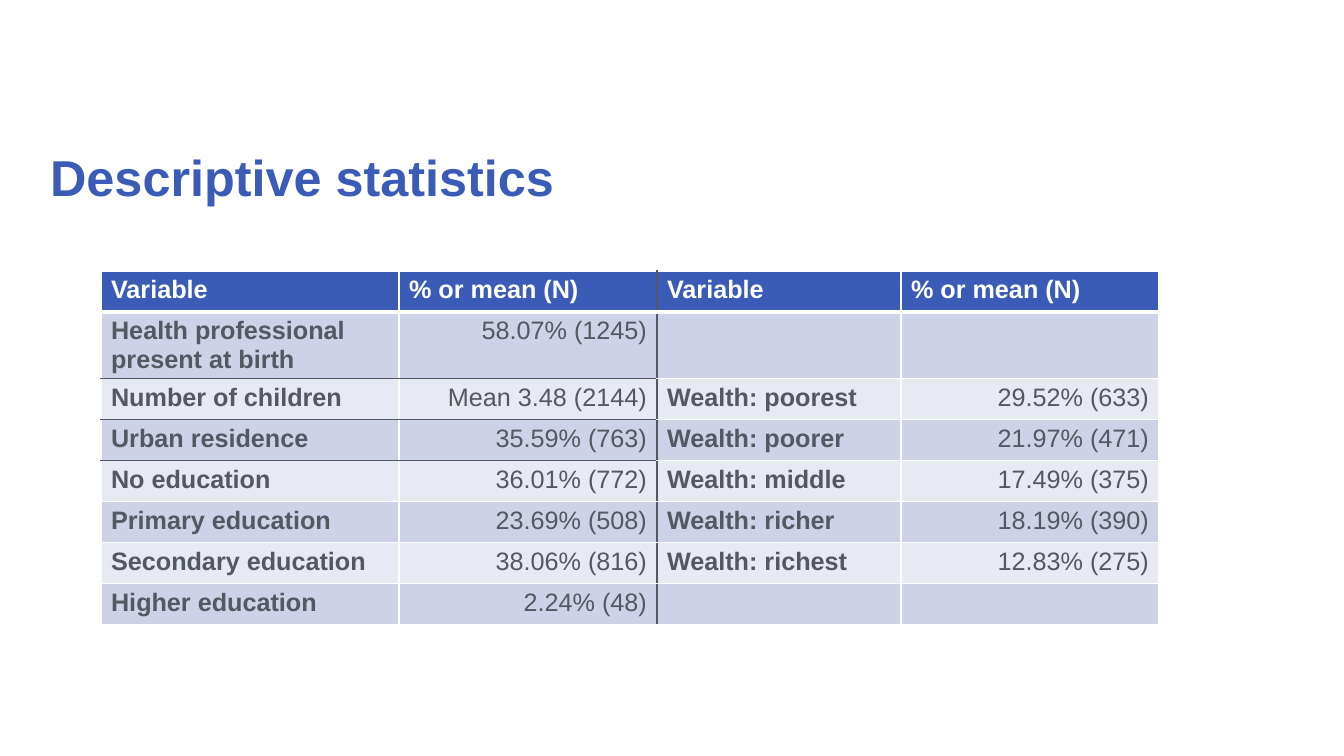
from dataclasses import dataclass

from lxml import etree
from pptx import Presentation
from pptx.dml.color import RGBColor
from pptx.enum import text
from pptx.oxml import ns
from pptx.util import Emu, Pt

EMU_PER_PX = 914400 / 100.8

BLUE = RGBColor(0x3A, 0x5C, 0xB7)
GREY = RGBColor(0x54, 0x58, 0x60)
WHITE = RGBColor(0xFF, 0xFF, 0xFF)
BAND_DARK = RGBColor(0xCE, 0xD2, 0xE6)
BAND_LIGHT = RGBColor(0xE8, 0xEA, 0xF3)

HEADINGS = ("Variable", "% or mean (N)")
COLUMN_WIDTHS = (298, 258, 244, 258)
ROW_HEIGHT = 41
RULED_ROWS = (1, 2, 3)  # rows with a grey rule below the left half


@dataclass(frozen=True)
class Statistic:
    variable: str = ""
    value: str = ""


BIRTH_AND_EDUCATION = (
    Statistic("Health professional present at birth", "58.07% (1245)"),
    Statistic("Number of children", "Mean 3.48 (2144)"),
    Statistic("Urban residence", "35.59% (763)"),
    Statistic("No education", "36.01% (772)"),
    Statistic("Primary education", "23.69% (508)"),
    Statistic("Secondary education", "38.06% (816)"),
    Statistic("Higher education", "2.24% (48)"),
)
WEALTH = (
    Statistic(),
    Statistic("Wealth: poorest", "29.52% (633)"),
    Statistic("Wealth: poorer", "21.97% (471)"),
    Statistic("Wealth: middle", "17.49% (375)"),
    Statistic("Wealth: richer", "18.19% (390)"),
    Statistic("Wealth: richest", "12.83% (275)"),
    Statistic(),
)


def px(length: int) -> Emu:
    return Emu(round(length * EMU_PER_PX))


def format_font(font, size: int, color: RGBColor, bold: bool) -> None:
    for name, value in {"name": "Arial", "size": Pt(size), "bold": bold}.items():
        setattr(font, name, value)
    font.color.rgb = color


def add_border(cell, side: str, color: RGBColor, width: int = 1) -> None:
    properties = cell._tc.get_or_add_tcPr()
    line = etree.SubElement(properties, ns.qn(f"a:ln{side}"), w=str(Pt(width)))
    fill = etree.SubElement(line, ns.qn("a:solidFill"))
    etree.SubElement(fill, ns.qn("a:srgbClr"), val=str(color))


def draw_borders(cell, row: int, column: int) -> None:
    left_half = column < 2
    add_border(cell, "L", GREY if column == 2 else WHITE)
    add_border(cell, "R", GREY if column == 1 else WHITE)
    add_border(cell, "T", GREY if left_half and row - 1 in RULED_ROWS else WHITE,
               3 if row == 1 else 1)
    add_border(cell, "B", GREY if left_half and row in RULED_ROWS else WHITE,
               3 if row == 0 else 1)


def fill_cell(cell, content: str, row: int, column: int) -> None:
    header = row == 0
    is_value = column % 2 == 1
    draw_borders(cell, row, column)
    cell.fill.solid()
    cell.fill.fore_color.rgb = BLUE if header else BAND_DARK if row % 2 else BAND_LIGHT
    cell.text = content
    paragraph = cell.text_frame.paragraphs[0]
    if is_value and not header:
        paragraph.alignment = text.PP_ALIGN.RIGHT
    format_font(paragraph.font, 18, WHITE if header else GREY, header or not is_value)
    for run in paragraph.runs:
        format_font(run.font, 18, WHITE if header else GREY, header or not is_value)


def add_title(slide, content: str) -> None:
    title = slide.shapes.title
    place = {"left": px(40), "top": px(107), "width": px(1264), "height": px(146)}
    for name, value in place.items():
        setattr(title, name, value)
    frame = title.text_frame
    frame.text = content
    frame.auto_size = text.MSO_AUTO_SIZE.NONE
    frame.vertical_anchor = text.MSO_ANCHOR.MIDDLE
    paragraph = frame.paragraphs[0]
    paragraph.alignment = text.PP_ALIGN.LEFT
    paragraph.line_spacing = 0.9
    format_font(paragraph.runs[0].font, 36, BLUE, True)


def add_statistics(slide) -> None:
    rows = [HEADINGS * 2] + [
        (left.variable, left.value, right.variable, right.value)
        for left, right in zip(BIRTH_AND_EDUCATION, WEALTH)
    ]
    frame = slide.shapes.add_table(
        len(rows), len(COLUMN_WIDTHS), px(101), px(271),
        px(sum(COLUMN_WIDTHS)), px(ROW_HEIGHT * len(rows)))
    table = frame.table
    for column, width in zip(table.columns, COLUMN_WIDTHS):
        column.width = px(width)
    for row, contents in enumerate(rows):
        table.rows[row].height = px(ROW_HEIGHT)
        for column, content in enumerate(contents):
            fill_cell(table.cell(row, column), content, row, column)
    frame.height = px(357)  # room for the two-line first row


def main() -> None:
    deck = Presentation()
    deck.slide_width, deck.slide_height = px(1344), px(756)
    slide = deck.slides.add_slide(deck.slide_layouts[5])  # title only
    add_title(slide, "Descriptive statistics")
    add_statistics(slide)
    deck.save("out.pptx")


if __name__ == "__main__":
    main()
